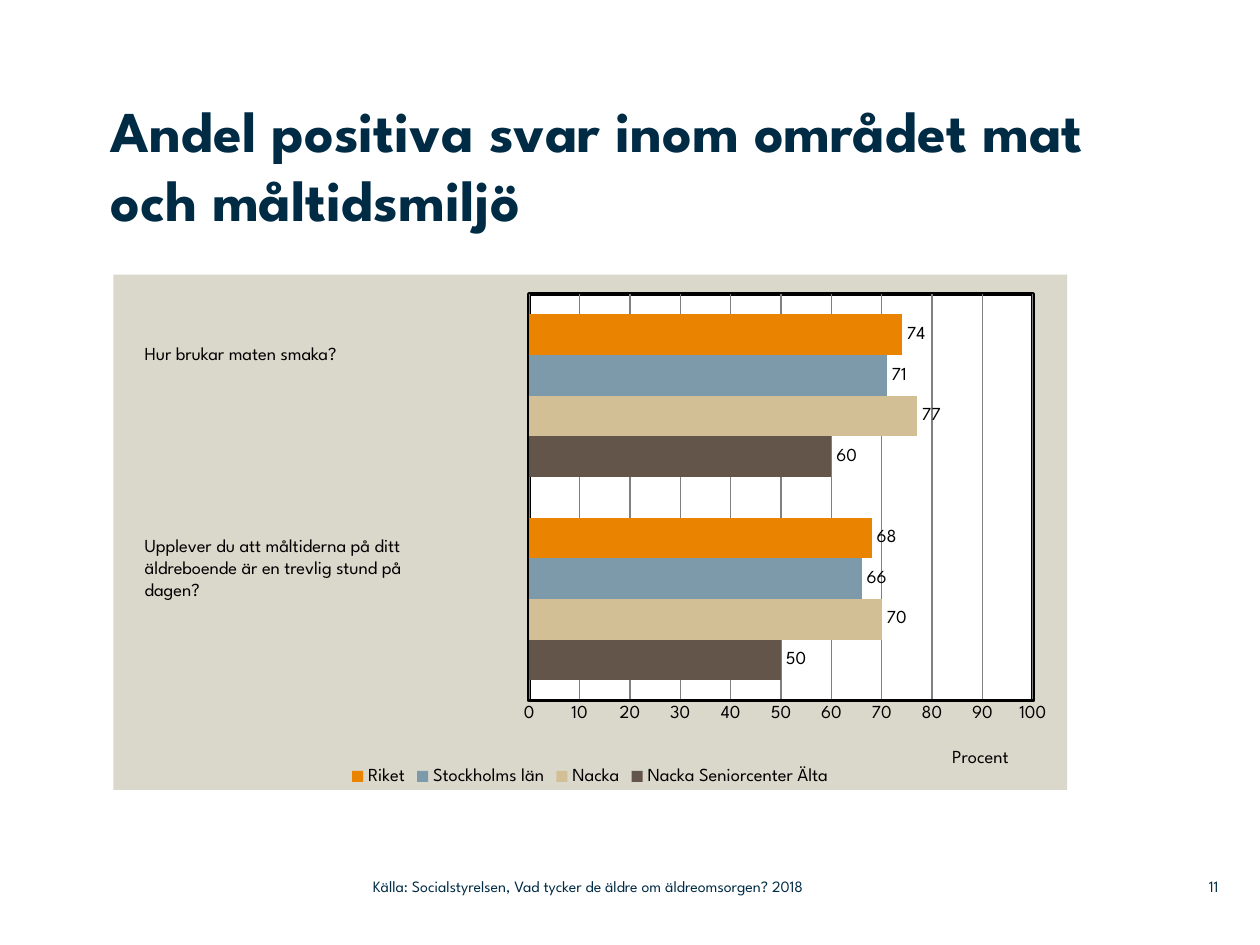
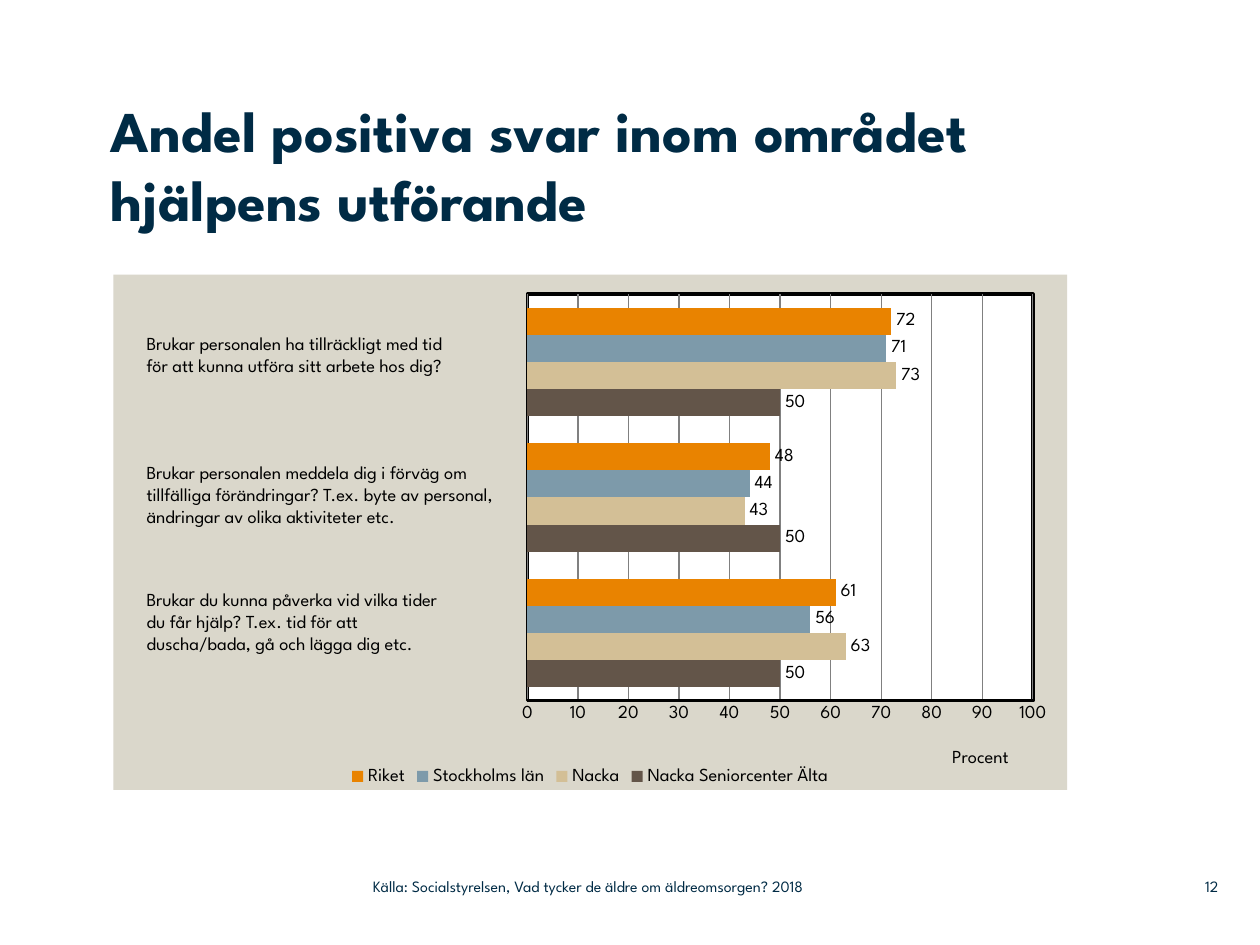
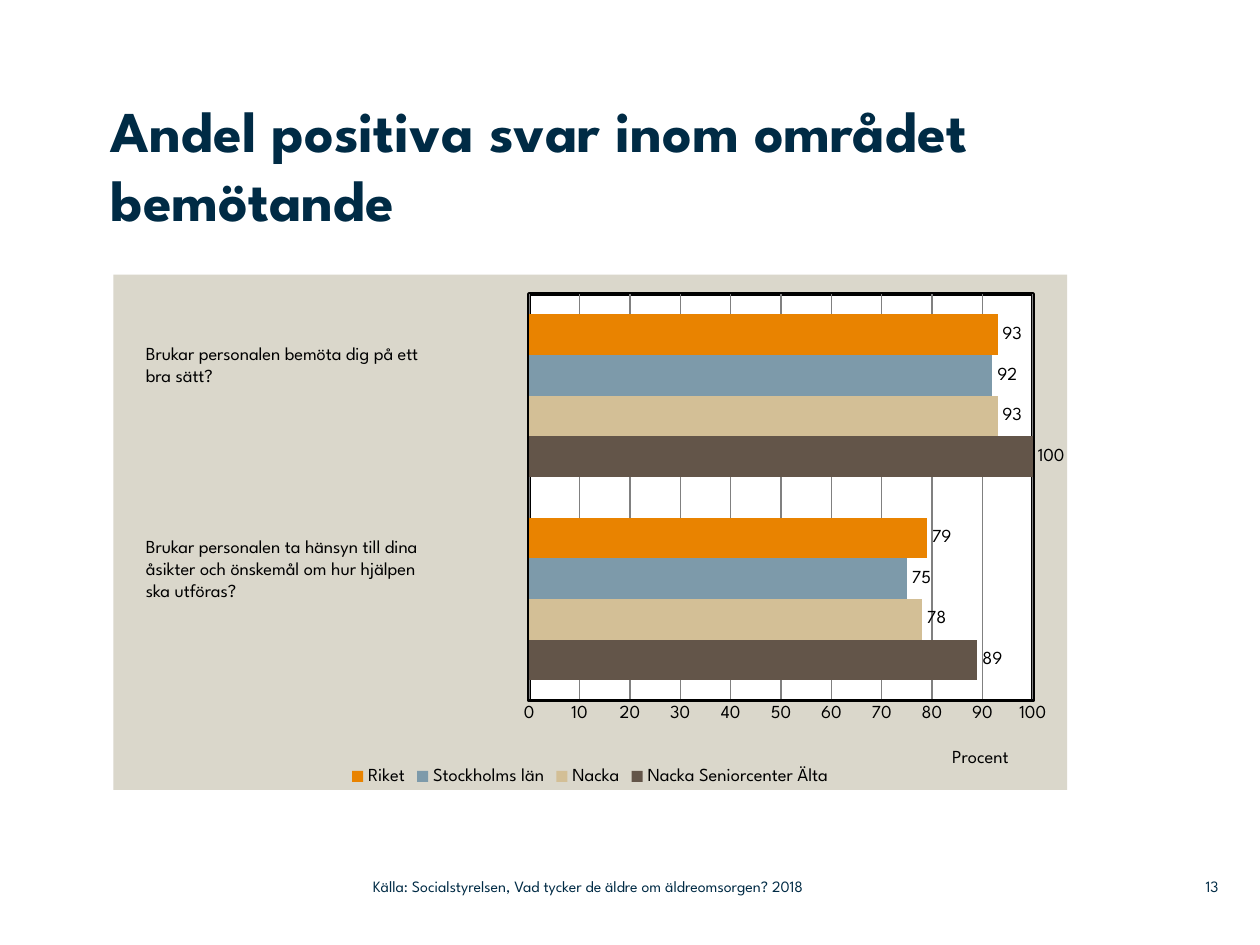
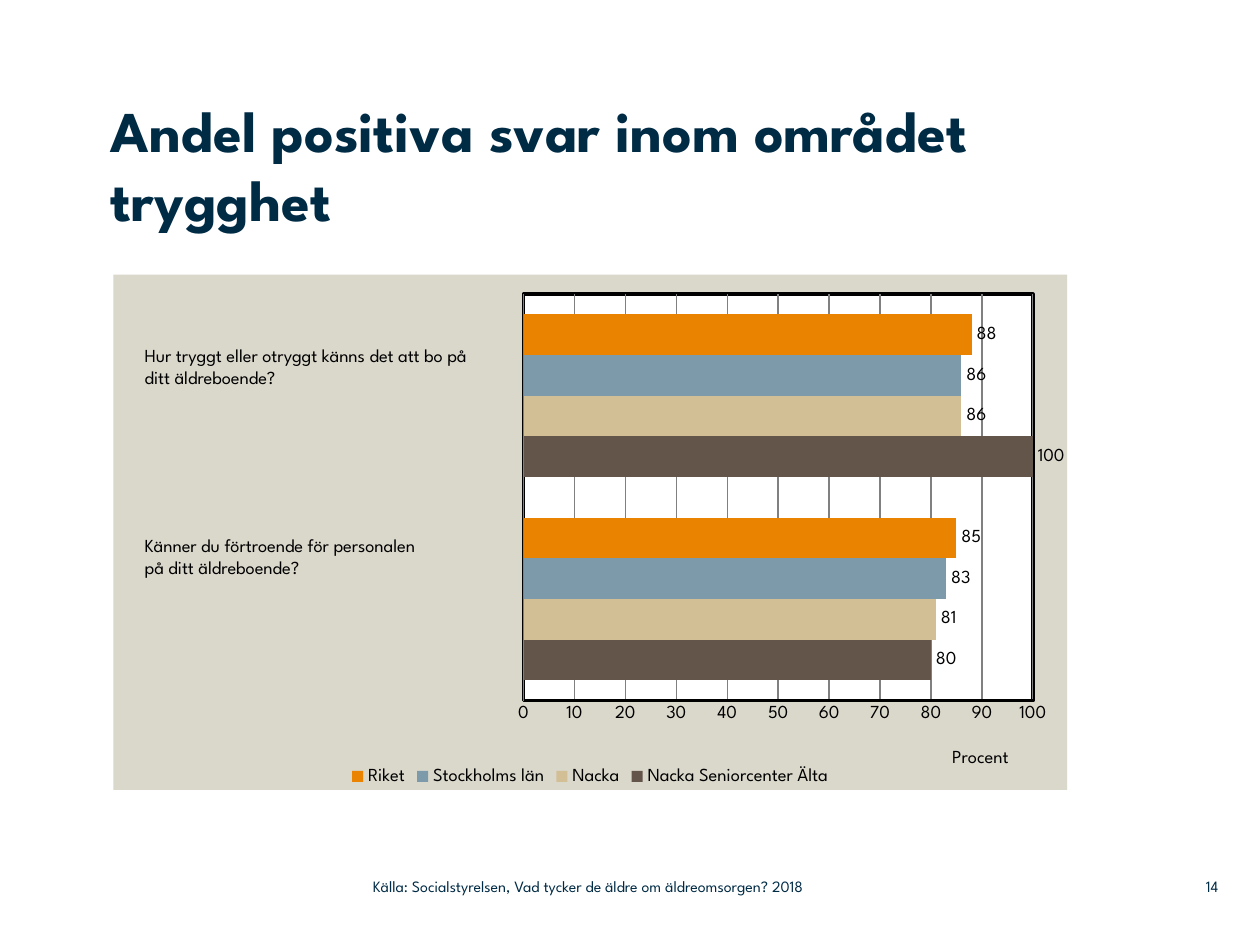
import pptx
import pptx.chart.data
import pptx.dml.color
import pptx.enum.chart
import pptx.enum.text
import pptx.oxml
import pptx.oxml.ns
import pptx.util

Pt = pptx.util.Pt
RGB = pptx.dml.color.RGBColor
ALIGN = pptx.enum.text.PP_ALIGN
ANCHOR = pptx.enum.text.MSO_ANCHOR
KIND = pptx.enum.chart

NAVY = RGB(0x00, 0x2B, 0x45)
BLACK = RGB(0x00, 0x00, 0x00)
WHITE = RGB(0xFF, 0xFF, 0xFF)
GRAY = RGB(0x80, 0x80, 0x80)
STONE = RGB(0xDA, 0xD7, 0xCB)
BROWN = RGB(0x63, 0x55, 0x49)
SAND = RGB(0xD3, 0xBF, 0x96)
BLUE = RGB(0x7D, 0x9A, 0xAA)
ORANGE = RGB(0xE9, 0x83, 0x00)

FONT = "League Spartan"
SOURCE = "Källa: Socialstyrelsen, Vad tycker de äldre om äldreomsorgen? 2018"
GROUPS = [("Nacka Seniorcenter Älta", BROWN), ("Nacka", SAND),
          ("Stockholms län", BLUE), ("Riket", ORANGE)]
RIGHT = 0.964  # right edge of every plot, as a share of the chart
FIRST = 11     # first page number


def layout(**parts):
    """A manual chart layout from x, y and, for a plot, w and h."""
    ns = pptx.oxml.ns.nsdecls("c")
    target = '<c:layoutTarget val="inner"/>' if "w" in parts else ""
    modes = "".join(f'<c:{k}Mode val="edge"/>' for k in "xy")
    sizes = "".join(f'<c:{k} val="{v:.3f}"/>' for k, v in parts.items())
    return pptx.oxml.parse_xml(
        f"<c:layout {ns}><c:manualLayout>{target}{modes}{sizes}"
        "</c:manualLayout></c:layout>")


def area(fill, line=None):
    """Fill and outline for a chart or plot area."""
    ns = pptx.oxml.ns.nsdecls("c", "a")

    def solid(color):
        return f'<a:solidFill><a:srgbClr val="{color}"/></a:solidFill>'

    edge = (f'<a:ln w="{Pt(2)}">{solid(line)}</a:ln>' if line is not None
            else "<a:ln><a:noFill/></a:ln>")
    return pptx.oxml.parse_xml(f"<c:spPr {ns}>{solid(fill)}{edge}</c:spPr>")


def clear(parent):
    """Drop the automatic layout of a chart part."""
    old = parent.find(pptx.oxml.ns.qn("c:layout"))
    if old is not None:
        parent.remove(old)


class Deck:
    def __init__(self):
        self.prs = pptx.Presentation()
        self.prs.slide_width, self.prs.slide_height = Pt(720), Pt(540)
        self.slide = None

    def style(self, font, size, color, bold=False):
        font.name, font.size, font.bold = FONT, Pt(size), bold
        font.color.rgb = color

    def put(self, frame, lines, size, color, align=ALIGN.LEFT, bold=False):
        for i, line in enumerate(lines):
            para = frame.add_paragraph() if i else frame.paragraphs[0]
            para.alignment = align
            run = para.add_run()
            run.text = line
            self.style(run.font, size, color, bold)

    def bare(self, frame, anchor):
        frame.margin_left = frame.margin_right = 0
        frame.margin_top = frame.margin_bottom = 0
        frame.vertical_anchor = anchor

    def page(self, title, width):
        self.slide = self.prs.slides.add_slide(self.prs.slide_layouts[5])
        shape = self.slide.shapes.title
        shape.left, shape.top = Pt(63.36), Pt(54)
        shape.width, shape.height = Pt(width), Pt(102.24)
        frame = shape.text_frame
        frame.word_wrap = True
        frame.auto_size = pptx.enum.text.MSO_AUTO_SIZE.NONE
        self.bare(frame, ANCHOR.TOP)
        self.put(frame, [title], 33, NAVY, bold=True)

    def box(self, left, top, width, height):
        frame = self.slide.shapes.add_textbox(
            Pt(left), Pt(top), Pt(width), Pt(height)).text_frame
        frame.word_wrap = True
        return frame

    def ask(self, left, top, rows, lines):
        frame = self.box(left, top, 213.84, 7.2 + 12.7 * rows)
        self.put(frame, lines, 10.5, BLACK)

    def foot(self, left, width, text, align=ALIGN.LEFT):
        frame = self.box(left, 496.08, width, 20.88)
        self.bare(frame, ANCHOR.MIDDLE)
        self.put(frame, [text], 9, NAVY, align)

    def chart(self, left, table):
        data = pptx.chart.data.CategoryChartData()
        data.categories = [str(i + 1) for i in range(len(table[0]))]
        for (name, _), vals in zip(GROUPS, table):
            data.add_series(name, vals)
        chart = self.slide.shapes.add_chart(
            KIND.XL_CHART_TYPE.BAR_CLUSTERED, Pt(64.8), Pt(156.96),
            Pt(545.04), Pt(294.48), data).chart
        self.style(chart.font, 10.5, BLACK)
        chart.has_title = False

        # Legend
        chart.has_legend = True
        chart.legend.position = KIND.XL_LEGEND_POSITION.BOTTOM
        chart.legend.include_in_layout = False
        self.style(chart.legend.font, 10.5, BLACK)

        # Bars and labels
        plot = chart.plots[0]
        plot.gap_width, plot.vary_by_categories = 100, False
        for bar, (_, color) in zip(plot.series, GROUPS):
            bar.format.fill.solid()
            bar.format.fill.fore_color.rgb = color
            labels = bar.data_labels
            labels.show_value = True
            labels.position = KIND.XL_LABEL_POSITION.OUTSIDE_END
            self.style(labels.font, 10.5, BLACK)
        self.axes(chart)

        # Areas
        root = chart.element.find(pptx.oxml.ns.qn("c:chart"))
        root.addnext(area(STONE))
        inner = root.find(pptx.oxml.ns.qn("c:plotArea"))
        clear(inner)
        inner.insert(0, layout(x=left, y=0.038, w=RIGHT - left, h=0.789))
        inner.append(area(WHITE, BLACK))

    def axes(self, chart):
        chart.category_axis.visible = False
        axis = chart.value_axis
        axis.minimum_scale, axis.maximum_scale = 0, 100
        axis.major_unit = 10
        axis.major_tick_mark = axis.minor_tick_mark = KIND.XL_TICK_MARK.NONE
        axis.format.line.color.rgb = BLACK
        axis.format.line.width = Pt(2)
        axis.has_major_gridlines = True
        grid = axis.major_gridlines.format.line
        grid.color.rgb, grid.width = GRAY, Pt(0.75)
        self.style(axis.tick_labels.font, 10.5, BLACK)
        title = axis.axis_title
        self.put(title.text_frame, ["Procent"], 10.5, BLACK)
        clear(title.element)
        rich = title.element.find(pptx.oxml.ns.qn("c:tx"))
        rich.addnext(layout(x=0.876, y=0.913))


# Per page: title, title width, plot left, values by group,
# left edge of the questions, questions as (top, rows, lines)
PAGES = [
    ("Andel positiva svar inom området mat och måltidsmiljö", 606.24, 0.436,
     [(50, 60), (70, 77), (66, 71), (68, 74)], 75.6,
     [(192.24, 1, ["Hur brukar maten smaka?"]),
      (301.68, 3, ["Upplever du att måltiderna på ditt äldreboende är en "
                   "trevlig stund på", "dagen?"])]),
    ("Andel positiva svar inom området hjälpens utförande", 547.2, 0.434,
     [(50, 50, 50), (63, 43, 73), (56, 44, 71), (61, 48, 72)], 76.7,
     [(186.48, 2, ["Brukar personalen ha tillräckligt med tid",
                   "för att kunna utföra sitt arbete hos dig?"]),
      (259.92, 4, ["Brukar personalen meddela dig i förväg om tillfälliga "
                   "förändringar? T.ex. byte av personal, ändringar av olika "
                   "aktiviteter etc."]),
      (332.64, 3, ["Brukar du kunna påverka vid vilka tider",
                   "du får hjälp? T.ex. tid för att",
                   "duscha/bada, gå och lägga dig etc."])]),
    ("Andel positiva svar inom området bemötande", 547.2, 0.436,
     [(89, 100), (78, 93), (75, 92), (79, 93)], 76.32,
     [(192.24, 2, ["Brukar personalen bemöta dig på ett", "bra sätt?"]),
      (302.4, 3, ["Brukar personalen ta hänsyn till dina",
                  "åsikter och önskemål om hur hjälpen", "ska utföras?"])]),
    ("Andel positiva svar inom området trygghet", 547.2, 0.43,
     [(80, 100), (81, 86), (83, 86), (85, 88)], 75.6,
     [(192.96, 2, ["Hur tryggt eller otryggt känns det att bo på ditt "
                   "äldreboende?"]),
      (301.68, 2, ["Känner du förtroende för personalen",
                   "på ditt äldreboende?"])]),
]


def main():
    deck = Deck()
    for num, (title, width, left, table, edge, asks) in enumerate(PAGES, FIRST):
        deck.page(title, width)
        deck.chart(left, table)
        for top, rows, lines in asks:
            deck.ask(edge, top, rows, lines)
        deck.foot(662.4, 33.84, str(num), ALIGN.RIGHT)
        deck.foot(213.12, 318.96, SOURCE)
    deck.prs.save("out.pptx")


if __name__ == "__main__":
    main()
